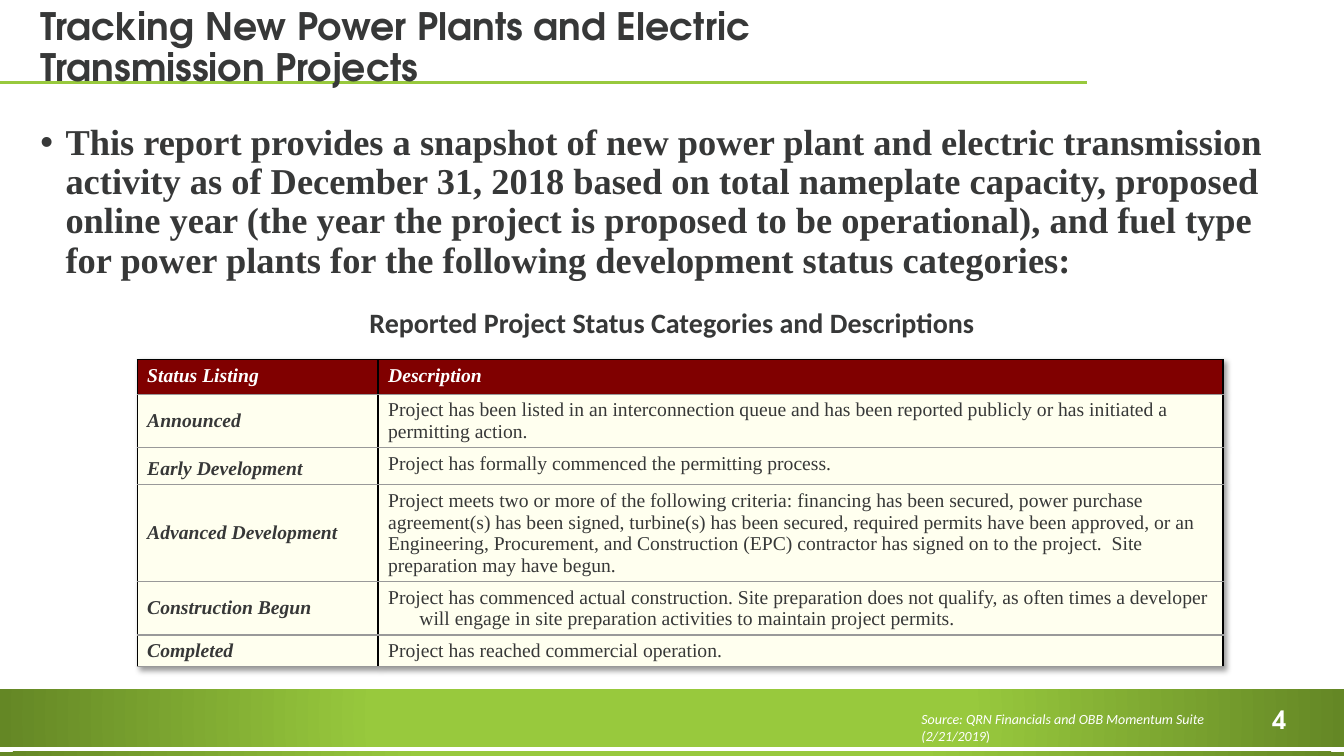
from lxml import etree
from pptx import Presentation
from pptx import util as u
from pptx.dml import color
from pptx.enum import shapes, text
from pptx.oxml import parse_xml
from pptx.oxml import ns

Inches, Pt = u.Inches, u.Pt
GREEN, DARK_GREEN, INK, WHITE = "98C93D", "648725", "373838", "FFFFFF"
SERIF, SANS, DISPLAY = "Times New Roman", "Calibri", "TeX Gyre Adventor"


def rgb(value):
    return color.RGBColor.from_string(value)


def style(paragraph, size, name, ink, bold=False, italic=False):
    font = paragraph.font
    font.size, font.name, font.bold, font.italic = Pt(size), name, bold, italic
    font.color.rgb = rgb(ink)


deck = Presentation()
deck.slide_width, deck.slide_height = Inches(13.33), Inches(7.5)
slide = deck.slides.add_slide(deck.slide_layouts[1])

title_rule = slide.shapes.add_connector(
    shapes.MSO_CONNECTOR.STRAIGHT, 0, Inches(0.82), Inches(10.78), Inches(0.82))
title_rule.line.color.rgb = rgb(GREEN)
title_rule.line.width = Pt(1.75)
etree.SubElement(title_rule._element.spPr, ns.qn("a:effectLst"))
title_rule._element.getparent().insert(2, title_rule._element)

for top, height, light_stop in [(6.84, 0.57, 0.44), (7.46, 0.05, 0.37)]:
    band = slide.shapes.add_shape(
        shapes.MSO_SHAPE.RECTANGLE, 0, Inches(top), Inches(13.33), Inches(height))
    band.shadow.inherit = False
    band.line.fill.background()
    band.fill.gradient()
    for stop, position, shade in zip(
            band.fill.gradient_stops, (light_stop, 1), (GREEN, DARK_GREEN)):
        stop.position = position
        stop.color.rgb = rgb(shade)
    linear = band._element.spPr.find(".//" + ns.qn("a:lin"))
    linear.getparent().replace(linear, parse_xml(
        f'<a:path {ns.nsdecls("a")} path="circle">'
        '<a:fillToRect l="50000" t="50000" r="50000" b="50000"/></a:path>'))

title = slide.shapes.title
title.left, title.top, title.width, title.height = map(Inches, (0.3, 0.28, 12.67, 0.66))
title.text_frame.vertical_anchor = text.MSO_ANCHOR.BOTTOM
title.text_frame.auto_size = text.MSO_AUTO_SIZE.NONE
heading = title.text_frame.paragraphs[0]
heading.text = "Tracking New Power Plants and Electric"
heading.add_line_break()
heading.add_run().text = "Transmission Projects"
heading.alignment = text.PP_ALIGN.LEFT
heading.line_spacing = 0.9
style(heading, 27, DISPLAY, INK, bold=True)

body = slide.placeholders[1]
body.left, body.top, body.width, body.height = map(Inches, (0.3, 1.18, 12.67, 5.64))
body.text_frame.auto_size = text.MSO_AUTO_SIZE.NONE
summary = body.text_frame.paragraphs[0]
summary.text = (
    "This report provides a snapshot of new power plant and electric transmission "
    "activity as of December 31, 2018 based on total nameplate capacity, proposed "
    "online year (the year the project is proposed to be operational), and fuel type "
    "for power plants for the following development status categories:")
summary.line_spacing = 0.9
summary.space_before = Pt(0)
summary_layout = summary._p.get_or_add_pPr()
summary_layout.set("marL", str(Inches(0.25)))
summary_layout.set("indent", str(-Inches(0.25)))
style(summary, 26, SERIF, INK, bold=True)

TOP, MIDDLE, BOTTOM = text.MSO_ANCHOR.TOP, text.MSO_ANCHOR.MIDDLE, text.MSO_ANCHOR.BOTTOM
statuses = [
    (0.34, TOP, "Status Listing", "Description", True),
    (0.52, MIDDLE, "Announced",
     "Project has been listed in an interconnection queue and has been reported "
     "publicly or has initiated a permitting action.", False),
    (0.37, BOTTOM, "Early Development",
     "Project has formally commenced the permitting process.", True),
    (0.92, MIDDLE, "Advanced Development",
     "Project meets two or more of the following criteria: financing has been secured, "
     "power purchase agreement(s) has been signed, turbine(s) has been secured, required "
     "permits have been approved, or an Engineering, Procurement, and Construction (EPC) "
     "contractor has signed on to the project.  Site preparation may have begun.", False),
    (0.52, MIDDLE, "Construction Begun",
     "Project has commenced actual construction. Site preparation does not qualify, as "
     "often times a developer will engage in site preparation activities to maintain "
     "project permits.", True),
    (0.31, BOTTOM, "Completed", "Project has reached commercial operation.", True),
]
status_table = slide.shapes.add_table(
    len(statuses), 2, Inches(1.36), Inches(3.57), Inches(10.77), Inches(2.98)).table
status_table.horz_banding = False
status_table._tbl.tblPr.insert(0, parse_xml(
    f'<a:effectLst {ns.nsdecls("a")}><a:outerShdw blurRad="50800" dist="38100" dir="2700000">'
    '<a:srgbClr val="000000"><a:alpha val="40000"/></a:srgbClr></a:outerShdw></a:effectLst>'))
for column, width in zip(status_table.columns, (2.39, 8.38)):
    column.width = Inches(width)

for row, (height, anchor, status, description, hanging) in enumerate(statuses):
    status_table.rows[row].height = Inches(height)
    header = row == 0
    for col, wording in enumerate((status, description)):
        cell = status_table.cell(row, col)
        cell.text = wording
        cell.vertical_anchor = TOP if col else anchor
        cell.fill.solid()
        cell.fill.fore_color.rgb = rgb("800000" if header else "FFFFEF")
        entry = cell.text_frame.paragraphs[0]
        if hanging or col == 0:
            entry_layout = entry._p.get_or_add_pPr()
            entry_layout.set("marL", str(Inches(0.31)))
            entry_layout.set("indent", str(-Inches(0.31)))
        emphasis = header or col == 0
        style(entry, 14, SERIF, WHITE if header else INK, emphasis, emphasis)
        edges = {"L": "000000", "R": "000000",
                 "T": "000000" if header else "999999", "B": "999999"}
        for place, (side, shade) in enumerate(edges.items()):
            cell._tc.get_or_add_tcPr().insert(place, parse_xml(
                f'<a:ln{side} {ns.nsdecls("a")} w="{Pt(1)}"><a:solidFill>'
                f'<a:srgbClr val="{shade}"/></a:solidFill></a:ln{side}>'))

labels = [
    ((2.68, 2.98, 7.97, 0.44), ["Reported Project Status Categories and Descriptions"],
     True, text.PP_ALIGN.CENTER, (20, SANS, INK, True)),
    ((9.04, 7, 3.49, 0.27), ["Source: QRN Financials and OBB Momentum Suite (2/21/2019", ")"],
     False, text.PP_ALIGN.LEFT, (10, SANS, WHITE)),
    ((12.52, 6.94, 0.48, 0.4), ["4"],
     False, text.PP_ALIGN.LEFT, (18, DISPLAY, WHITE, True)),
]
for bounds, pieces, wrap, alignment, look in labels:
    label = slide.shapes.add_textbox(*map(Inches, bounds)).text_frame
    label.word_wrap = wrap
    line = label.paragraphs[0]
    line.alignment = alignment
    for piece in pieces:
        line.add_run().text = piece
    style(line, *look)
    if len(pieces) > 1:
        line.runs[0].font.italic = True

deck.save("out.pptx")
